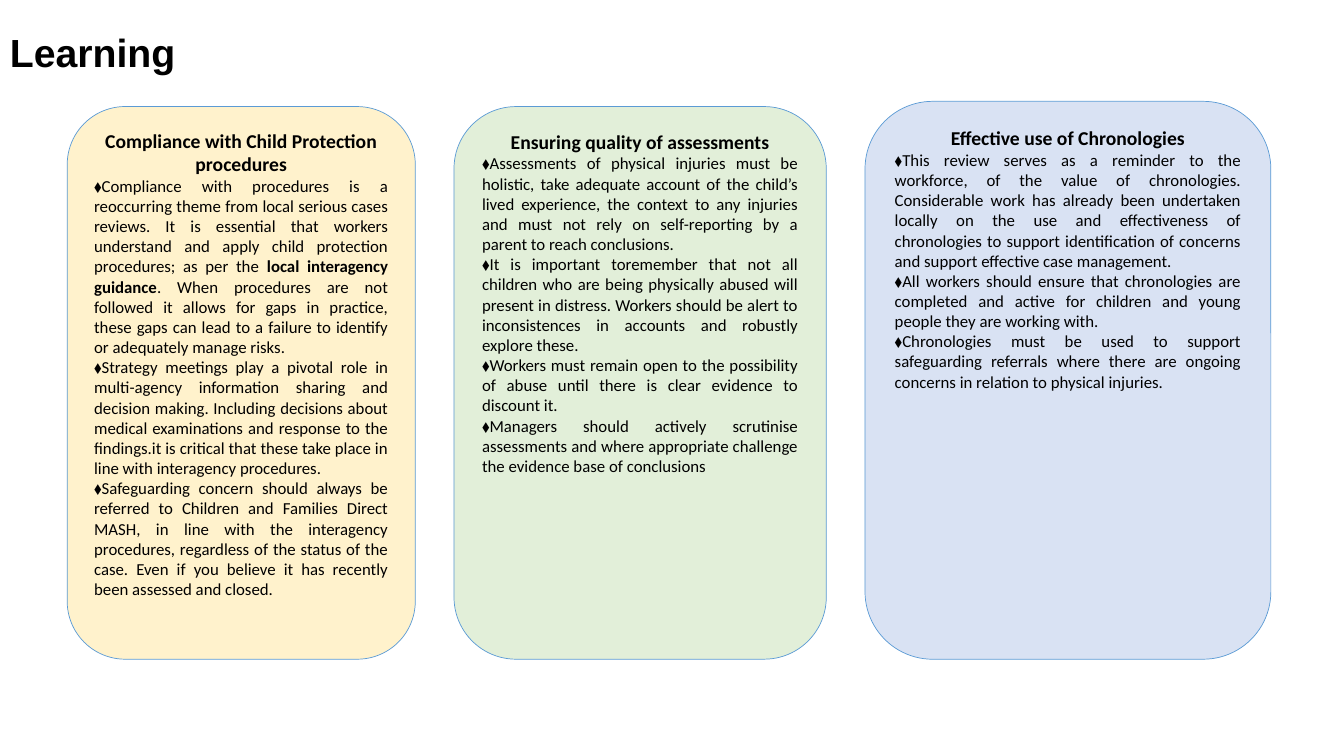
from pptx import Presentation
from pptx.dml.color import RGBColor as RGB
from pptx.enum.shapes import MSO_SHAPE as Shape
from pptx.enum.text import MSO_ANCHOR as Anchor, PP_ALIGN as Align
from pptx.util import Inches, Pt

WIDE, HIGH = Inches(13.33), Inches(7.5)
COL, ROW = WIDE / 100, HIGH / 100  # grid of 100 columns and 100 rows
LEFT, GAP, BASE = 5, 2.88, 87.2  # card row: first column, gap, bottom row

HUES = {
    "text": "000000",
    "edge": "5B9BD5",
    "sand": "FFF2CC",
    "mint": "E2EFD9",
    "sky": "D9E2F3",
}

# Fill, width in columns, top row, heading, points (** marks bold)
CARDS = [
    ("sand", 25.9, 14.1, "Compliance with Child Protection procedures", [
        "Compliance with procedures is a reoccurring theme from local serious "
        "cases reviews. It is essential that workers understand and apply "
        "child protection procedures; as per the **local interagency "
        "guidance**. When procedures are not followed it allows for gaps in "
        "practice, these gaps can lead to a failure to identify or adequately "
        "manage risks.",
        "Strategy meetings play a pivotal role in multi-agency information "
        "sharing and decision making. Including decisions about medical "
        "examinations and response to the findings.it is critical that these "
        "take place in line with interagency procedures.",
        "Safeguarding concern should always be referred to Children and "
        "Families Direct MASH, in line with the interagency procedures, "
        "regardless of the status of the case. Even if you believe it has "
        "recently been assessed and closed.",
    ]),
    ("mint", 27.7, 14.1, "Ensuring quality of assessments", [
        "Assessments of physical injuries must be holistic, take adequate "
        "account of the child’s lived experience, the context to any injuries "
        "and must not rely on self-reporting by a parent to reach conclusions.",
        "It is important toremember that not all children who are being "
        "physically abused will present in distress. Workers should be alert "
        "to inconsistences in accounts and robustly explore these.",
        "Workers must remain open to the possibility of abuse until there is "
        "clear evidence to discount it.",
        "Managers should actively scrutinise assessments and where "
        "appropriate challenge the evidence base of conclusions",
    ]),
    ("sky", 30.2, 13.4, "Effective use of Chronologies", [
        "This review serves as a reminder to the workforce, of the value of "
        "chronologies. Considerable work has already been undertaken locally "
        "on the use and effectiveness of chronologies to support "
        "identification of concerns and support effective case management.",
        "All workers should ensure that chronologies are completed and active "
        "for children and young people they are working with.",
        "Chronologies must be used to support safeguarding referrals where "
        "there are ongoing concerns in relation to physical injuries.",
    ]),
]


def paint(name):
    return RGB.from_string(HUES[name])


def grid(x, y, w, h):
    return [round(n) for n in (x * COL, y * ROW, w * COL, h * ROW)]


def write(para, text, size=12, font="Calibri", bold=False, align=Align.LEFT):
    """Fill a paragraph; text between ** marks switches weight."""
    para.alignment = align
    for i, part in enumerate(text.split("**")):
        run = para.add_run()
        run.text = part
        run.font.size, run.font.name = Pt(size), font
        run.font.bold = bold != (i % 2 == 1)
        run.font.color.rgb = paint("text")


def title(slide, box, text):
    frame = slide.shapes.add_textbox(*grid(*box)).text_frame
    frame.word_wrap = False
    frame.vertical_anchor = Anchor.TOP
    write(frame.paragraphs[0], text, size=28, font="Arial", bold=True)


def card(slide, box, fill, head, points):
    # Rounded panel
    panel = slide.shapes.add_shape(Shape.ROUNDED_RECTANGLE, *grid(*box))
    panel.shadow.inherit = False
    panel.fill.solid()
    panel.fill.fore_color.rgb = paint(fill)
    panel.line.color.rgb = paint("edge")
    panel.line.width = Pt(0.5)
    # Heading and points
    frame = panel.text_frame
    frame.word_wrap = True
    frame.vertical_anchor = Anchor.TOP
    write(frame.paragraphs[0], head, size=14, bold=True, align=Align.CENTER)
    for point in points:
        write(frame.add_paragraph(), "⬧" + point, align=Align.JUSTIFY)


def main():
    deck = Presentation()
    deck.slide_width, deck.slide_height = WIDE, HIGH
    slide = deck.slides.add_slide(deck.slide_layouts[6])

    # Cards from left to right, on a shared bottom row
    x = LEFT
    for fill, width, top, head, points in CARDS:
        card(slide, (x, top, width, BASE - top), fill, head, points)
        x += width + GAP

    title(slide, (0, 3.1, 14, 13.9), "Learning")
    deck.save("out.pptx")


if __name__ == "__main__":
    main()
